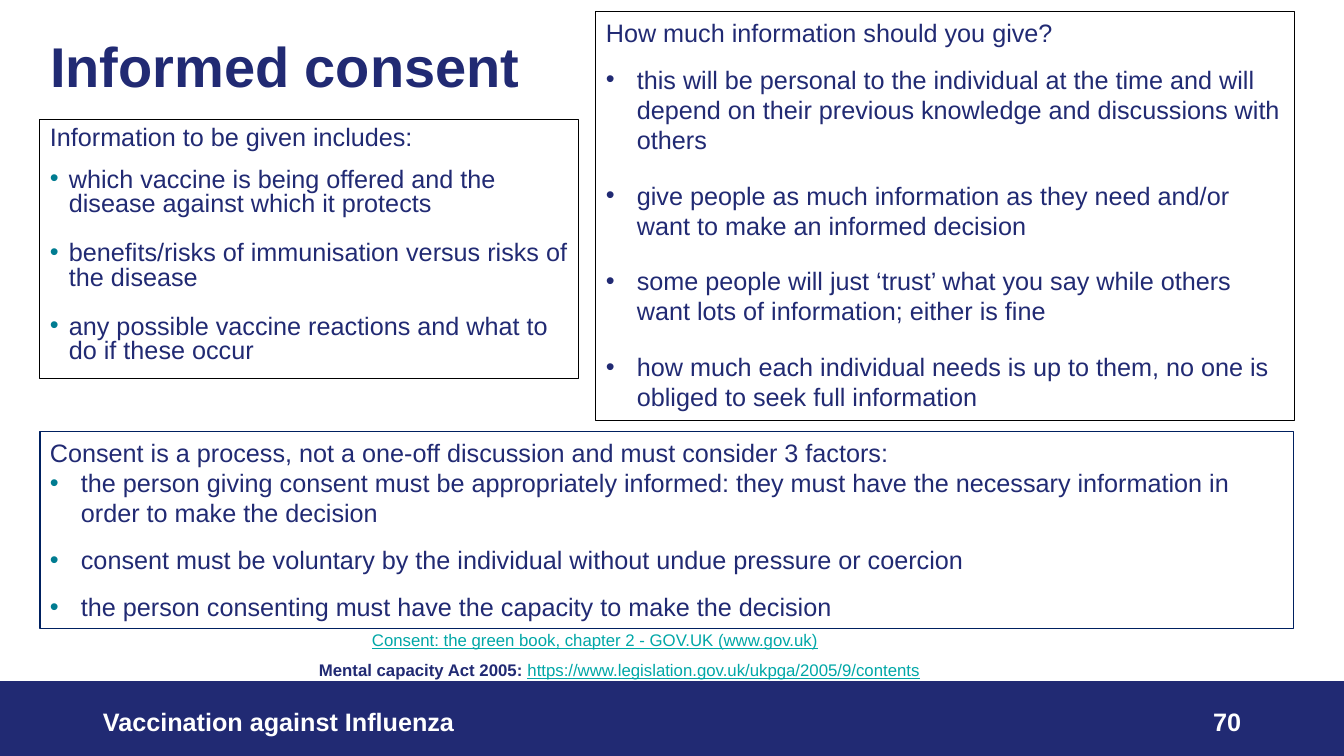
from lxml.etree import SubElement
from pptx import Presentation
from pptx.dml.color import RGBColor
from pptx.enum.shapes import MSO_SHAPE
from pptx.enum.text import MSO_ANCHOR, MSO_AUTO_SIZE, PP_ALIGN
from pptx.oxml.ns import qn
from pptx.util import Emu, Pt

SLIDE_WIDTH, SLIDE_HEIGHT = 1344, 756
EMU_PER_PX = 12192000 / SLIDE_WIDTH
FONT = "Arial"
COLOURS = {
    "navy": "212A73",
    "teal": "007C91",
    "link": "00A7A7",
    "black": "000000",
    "frame": "002060",
    "white": "FFFFFF",
}


def px(length):
    return Emu(round(length * EMU_PER_PX))


def colour(name):
    return RGBColor.from_string(COLOURS[name])


def add_run(paragraph, text, size=18, colour_name="navy", bold=False, underline=False):
    run = paragraph.add_run()
    run.text = text
    run.font.name = FONT
    run.font.size = Pt(size)
    run.font.bold = bold
    run.font.underline = underline
    run.font.color.rgb = colour(colour_name)


def add_bullet(paragraph, indent, colour_name):
    properties = paragraph._p.get_or_add_pPr()
    properties.set("marL", str(px(indent)))
    properties.set("indent", str(-px(indent)))
    bullet_colour = SubElement(properties, qn("a:buClr"))
    SubElement(bullet_colour, qn("a:srgbClr"), val=COLOURS[colour_name])
    SubElement(properties, qn("a:buFont"), typeface=FONT)
    SubElement(properties, qn("a:buChar"), char="•")


def add_text_box(slide, box, anchor=MSO_ANCHOR.TOP):
    shape = slide.shapes.add_textbox(*map(px, box))
    shape.text_frame.word_wrap = True
    shape.text_frame.vertical_anchor = anchor
    return shape


def add_title(slide, box, text):
    title = slide.shapes.title
    title.left, title.top, title.width, title.height = map(px, box)
    frame = title.text_frame
    frame.auto_size = MSO_AUTO_SIZE.NONE
    frame.vertical_anchor = MSO_ANCHOR.MIDDLE
    paragraph = frame.paragraphs[0]
    paragraph.alignment = PP_ALIGN.LEFT
    paragraph.line_spacing = 0.9
    add_run(paragraph, text, 40, bold=True)


def add_panel(slide, box, heading, points, line="black", bullet="teal", indent=31,
              heading_spacing=1.0, spacing=1.0, before=12, after=0, first_before=12):
    """Framed box with a heading line and bulleted points below it."""
    panel = add_text_box(slide, box)
    panel.line.color.rgb = colour(line)
    panel.line.width = Pt(0.75)
    frame = panel.text_frame
    frame.paragraphs[0].line_spacing = heading_spacing
    add_run(frame.paragraphs[0], heading)
    for index, point in enumerate(points):
        paragraph = frame.add_paragraph()
        add_bullet(paragraph, indent, bullet)
        paragraph.line_spacing = spacing
        paragraph.space_before = Pt(before if index else first_before)
        paragraph.space_after = Pt(after)
        add_run(paragraph, point)


def add_reference(slide, box, link, label=""):
    paragraph = add_text_box(slide, box).text_frame.paragraphs[0]
    if label:
        add_run(paragraph, label, 12, bold=True)
    add_run(paragraph, link, 12, "link", underline=True)


def add_footer(slide, box, text, number):
    left, top, width, height = box
    bar = slide.shapes.add_shape(MSO_SHAPE.RECTANGLE, *map(px, box))
    bar.shadow.inherit = False
    bar.fill.solid()
    bar.fill.fore_color.rgb = colour("navy")
    bar.line.color.rgb = colour("navy")
    bar.line.width = Pt(1)
    margin, number_width, text_height = 93, 302, 40
    text_top = top + 19
    number_left = left + width - margin - number_width
    for words, text_left, text_width, alignment in (
        (text, left + margin, 806, PP_ALIGN.LEFT),
        (number, number_left, number_width, PP_ALIGN.RIGHT),
    ):
        text_box = (text_left, text_top, text_width, text_height)
        shape = add_text_box(slide, text_box, MSO_ANCHOR.MIDDLE)
        paragraph = shape.text_frame.paragraphs[0]
        paragraph.alignment = alignment
        add_run(paragraph, words, colour_name="white", bold=True)


def build_consent_slide(presentation):
    slide = presentation.slides.add_slide(presentation.slide_layouts[5])
    add_footer(slide, (0, 682, SLIDE_WIDTH, 74), "Vaccination against Influenza", "70")
    add_title(slide, (40, 29, 1159, 81), "Informed consent")
    add_panel(
        slide, (40, 120, 539, 259), "Information to be given includes:",
        ["which vaccine is being offered and the disease against which it protects",
         "benefits/risks of immunisation versus risks of the disease",
         "any possible vaccine reactions and what to do if these occur"],
        indent=19, heading_spacing=0.9, spacing=0.8, after=6)
    add_panel(
        slide, (596, 12, 699, 409), "How much information should you give?",
        ["this will be personal to the individual at the time and will depend on "
         "their previous knowledge and discussions with others",
         "give people as much information as they need and/or want to make an "
         "informed decision",
         "some people will just ‘trust’ what you say while others want lots of "
         "information; either is fine",
         "how much each individual needs is up to them, no one is obliged to seek "
         "full information"],
        bullet="navy", after=6)
    add_reference(slide, (362, 625, 690, 30),
                  "Consent: the green book, chapter 2 - GOV.UK (www.gov.uk)")
    add_panel(
        slide, (40, 432, 1254, 197),
        "Consent is a process, not a one-off discussion and must consider 3 factors:",
        ["the person giving consent must be appropriately informed: they must have "
         "the necessary information in order to make the decision",
         "consent must be voluntary by the individual without undue pressure or coercion",
         "the person consenting must have the capacity to make the decision"],
        line="frame", first_before=0)
    add_reference(slide, (309, 655, 762, 75),
                  "https://www.legislation.gov.uk/ukpga/2005/9/contents",
                  "Mental capacity Act 2005: ")


def main():
    presentation = Presentation()
    presentation.slide_width = px(SLIDE_WIDTH)
    presentation.slide_height = px(SLIDE_HEIGHT)
    build_consent_slide(presentation)
    presentation.save("out.pptx")


if __name__ == "__main__":
    main()
